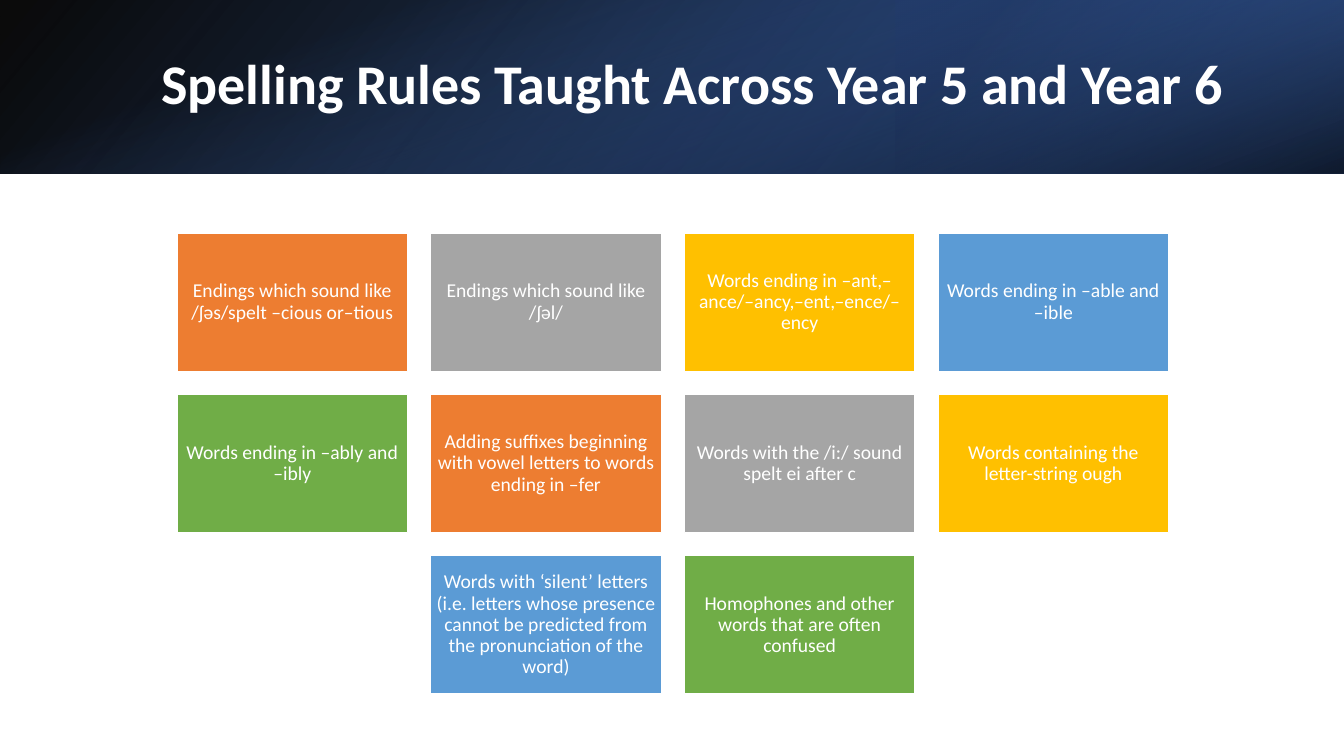
from lxml import etree
from pptx import Presentation
from pptx.dml.color import RGBColor
from pptx.enum.shapes import MSO_SHAPE
from pptx.enum.text import MSO_ANCHOR, PP_ALIGN
from pptx.oxml.ns import qn
from pptx.util import Pt

RECTANGLE = MSO_SHAPE.RECTANGLE
MIDDLE = MSO_ANCHOR.MIDDLE
CENTER, LEFT = PP_ALIGN.CENTER, PP_ALIGN.LEFT

WHITE = RGBColor(0xFF, 0xFF, 0xFF)
BLACK = RGBColor(0x00, 0x00, 0x00)
DEEP_BLUE = RGBColor(0x2F, 0x55, 0x97)
NAVY = RGBColor(0x20, 0x38, 0x64)
ROYAL = RGBColor(0x44, 0x72, 0xC4)
ORANGE = RGBColor(0xED, 0x7D, 0x31)
GRAY = RGBColor(0xA5, 0xA5, 0xA5)
YELLOW = RGBColor(0xFF, 0xC0, 0x00)
BLUE = RGBColor(0x5B, 0x9B, 0xD5)
GREEN = RGBColor(0x70, 0xAD, 0x47)

SLIDE_W, SLIDE_H = 960, 540
BANNER_H = 123.84


def add_rectangle(left, top, width, height):
    rectangle = slide.shapes.add_shape(
        RECTANGLE, Pt(left), Pt(top), Pt(width), Pt(height))
    rectangle.shadow.inherit = False
    return rectangle


def write_text(shape, text, size, bold, align, inset_x, inset_y):
    frame = shape.text_frame
    frame.text = text
    frame_format = {
        "word_wrap": True, "vertical_anchor": MIDDLE,
        "margin_left": Pt(inset_x), "margin_right": Pt(inset_x),
        "margin_top": Pt(inset_y), "margin_bottom": Pt(inset_y),
    }
    for name, value in frame_format.items():
        setattr(frame, name, value)
    paragraph = frame.paragraphs[0]
    paragraph.alignment = align
    paragraph.line_spacing = 0.9
    font = paragraph.runs[0].font
    for name, value in {"name": "Calibri", "size": Pt(size), "bold": bold}.items():
        setattr(font, name, value)
    font.color.rgb = WHITE


presentation = Presentation()
presentation.slide_width = Pt(SLIDE_W)
presentation.slide_height = Pt(SLIDE_H)
slide = presentation.slides.add_slide(presentation.slide_layouts[5])

# Banner: three layered gradients (box, rotation, flipped, clockwise angle,
# stops as position, colour, opacity in percent)
turned_offset = (SLIDE_W - BANNER_H) / 2
banner_layers = [
    ((0, 0, SLIDE_W, BANNER_H), 0, True, 140,
     [(0, BLACK, 96), (100, DEEP_BLUE, 100)]),
    ((640, 0, 320, BANNER_H), 180, True, 320,
     [(19, NAVY, 68), (100, ROYAL, 79)]),
    ((turned_offset, -turned_offset, BANNER_H, SLIDE_W), 90, False, 340,
     [(23, ROYAL, 0), (99, BLACK, 74)]),
]
for box, rotation, flipped, angle, stops in banner_layers:
    layer = add_rectangle(*box)
    layer.rotation = rotation
    if flipped:
        layer.element.spPr.find(qn("a:xfrm")).set("flipH", "1")
    layer.line.fill.background()
    layer.fill.gradient()
    layer.fill.gradient_angle = 360 - angle
    for stop, (position, color, _) in zip(layer.fill.gradient_stops, stops):
        stop.position = position / 100
        stop.color.rgb = color
    stop_colors = layer.element.spPr.iter(qn("a:srgbClr"))
    for stop_color, (_, _, opacity) in zip(stop_colors, stops):
        alpha = etree.SubElement(stop_color, qn("a:alpha"))
        alpha.set("val", str(opacity * 1000))

# Title, brought in front of the banner
title = slide.shapes.title
title.left, title.top, title.width, title.height = Pt(108), Pt(27.4), Pt(790.6), Pt(69)
write_text(title, "Spelling Rules Taught Across Year 5 and Year 6",
           40, True, LEFT, 7.2, 3.6)
title.element.getparent().append(title.element)

# Rule tiles: four columns, last row centred, five colours in turn
TILE_COLORS = [ORANGE, GRAY, YELLOW, BLUE, GREEN]
COLUMNS = 4
GRID_LEFT, GRID_TOP = 126.5, 166.4
TILE_W, TILE_H, GAP = 164.7, 98.8, 16.5
spelling_rules = [
    "Endings which sound like /ʃəs/spelt –cious or–tious",
    "Endings which sound like /ʃəl/",
    "Words ending in –ant,–ance/–ancy,–ent,–ence/–ency",
    "Words ending in –able and –ible",
    "Words ending in –ably and –ibly",
    "Adding suffixes beginning with vowel letters to words ending in –fer",
    "Words with the /i:/ sound spelt ei after c",
    "Words containing the letter-string ough",
    "Words with ‘silent’ letters (i.e. letters whose presence cannot be "
    "predicted from the pronunciation of the word)",
    "Homophones and other words that are often confused",
]
for index, rule in enumerate(spelling_rules):
    row, column = divmod(index, COLUMNS)
    tiles_in_row = min(COLUMNS, len(spelling_rules) - row * COLUMNS)
    column += (COLUMNS - tiles_in_row) / 2
    tile = add_rectangle(GRID_LEFT + column * (TILE_W + GAP),
                         GRID_TOP + row * (TILE_H + GAP), TILE_W, TILE_H)
    tile.fill.solid()
    tile.fill.fore_color.rgb = TILE_COLORS[index % len(TILE_COLORS)]
    tile.line.color.rgb = WHITE
    tile.line.width = Pt(1)
    write_text(tile, rule, 14, False, CENTER, 4.2, 4.2)

presentation.save("out.pptx")
